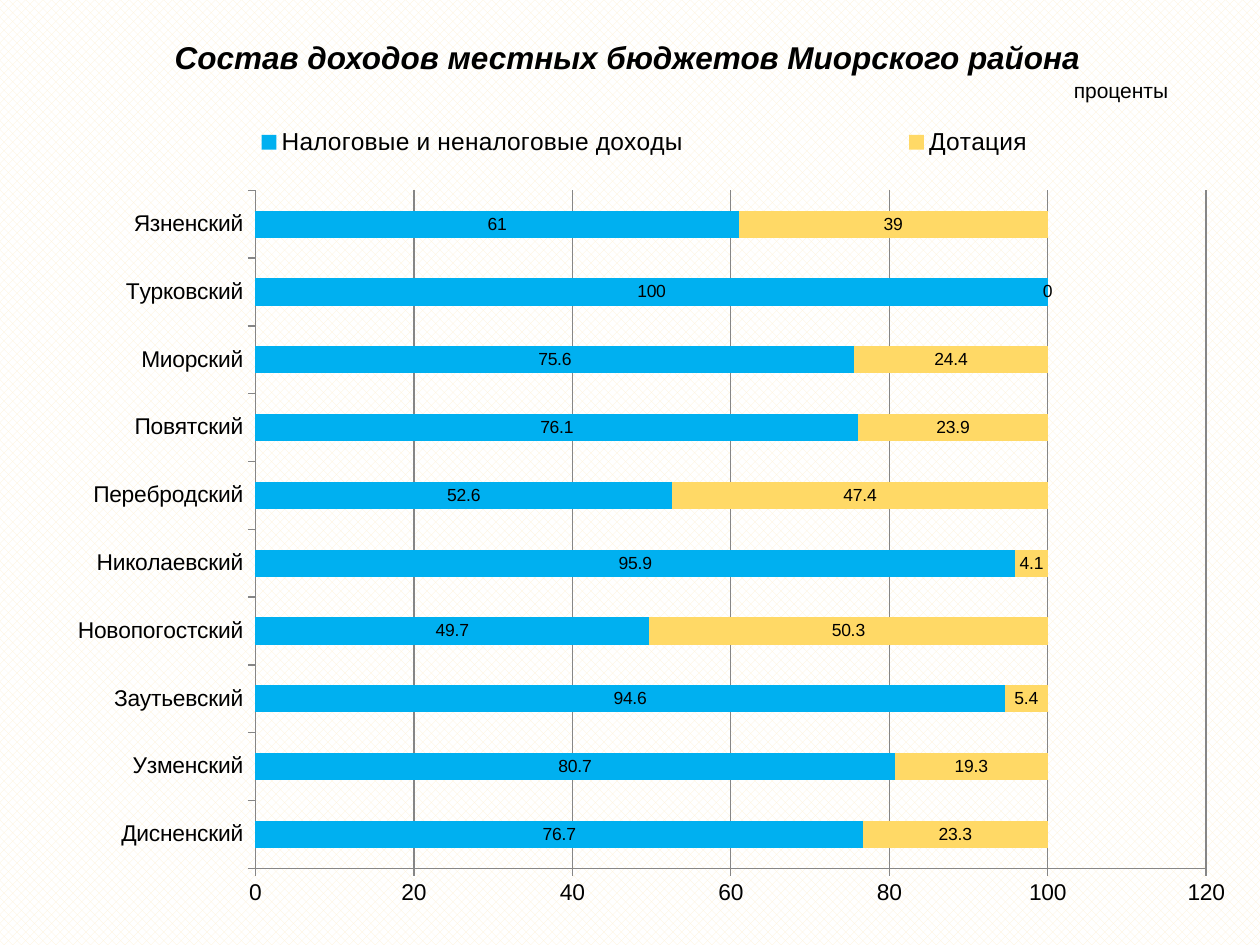
from lxml import etree
from pptx import Presentation
from pptx.chart.data import CategoryChartData
from pptx.dml.color import RGBColor
from pptx.enum.chart import XL_CHART_TYPE, XL_LABEL_POSITION, XL_LEGEND_POSITION, XL_TICK_MARK
from pptx.enum.dml import MSO_PATTERN
from pptx.enum.shapes import MSO_SHAPE
from pptx.enum.text import MSO_ANCHOR, PP_ALIGN
from pptx.oxml.ns import qn
from pptx.util import Cm, Pt

BAR_STACKED = XL_CHART_TYPE.BAR_STACKED
LABEL_CENTER = XL_LABEL_POSITION.CENTER
LEGEND_TOP = XL_LEGEND_POSITION.TOP
TICK_OUTSIDE = XL_TICK_MARK.OUTSIDE
DOTS = MSO_PATTERN.PERCENT_50
ROUNDED = MSO_SHAPE.ROUNDED_RECTANGLE
MIDDLE = MSO_ANCHOR.MIDDLE
CENTER = PP_ALIGN.CENTER

BLACK = RGBColor(0x00, 0x00, 0x00)
WHITE = RGBColor(0xFF, 0xFF, 0xFF)
CREAM = RGBColor(0xFE, 0xF1, 0xD6)
GRAY = RGBColor(0x86, 0x86, 0x86)
BLUE = RGBColor(0x00, 0xB0, 0xF0)
YELLOW = RGBColor(0xFF, 0xD9, 0x66)

BUDGETS = [
    ("Дисненский", 76.7, 23.3),
    ("Узменский", 80.7, 19.3),
    ("Заутьевский", 94.6, 5.4),
    ("Новопогостский", 49.7, 50.3),
    ("Николаевский", 95.9, 4.1),
    ("Перебродский", 52.6, 47.4),
    ("Повятский", 76.1, 23.9),
    ("Миорский", 75.6, 24.4),
    ("Турковский", 100, 0),
    ("Язненский", 61, 39),
]


def set_font(font, size):
    font.name = "Arial"
    font.size = Pt(size)
    font.color.rgb = BLACK


def set_layout(parent, after, x, y, w, h, inner=False):
    """Place a chart part by fractions of the chart area."""
    for old in parent.findall(qn("c:layout")):
        parent.remove(old)
    layout = etree.Element(qn("c:layout"))
    manual = etree.SubElement(layout, qn("c:manualLayout"))
    settings = [("layoutTarget", "inner")] if inner else []
    settings += [("xMode", "edge"), ("yMode", "edge"),
                 ("x", x), ("y", y), ("w", w), ("h", h)]
    for tag, value in settings:
        etree.SubElement(manual, qn(f"c:{tag}")).set("val", str(value))
    if after is None:
        parent.insert(0, layout)
    else:
        after.addnext(layout)


prs = Presentation()
prs.slide_width, prs.slide_height = Cm(25.4), Cm(19.05)
s = prs.slides.add_slide(prs.slide_layouts[5])
fill = s.background.fill
fill.patterned()
fill.pattern = DOTS
fill.fore_color.rgb = CREAM
fill.back_color.rgb = WHITE

# Title and unit
title = s.shapes.title
title.left, title.top, title.width, title.height = Cm(1.7), Cm(0.74), Cm(21.9), Cm(0.91)
unit = s.shapes.add_shape(ROUNDED, Cm(20.9), Cm(1.52), Cm(3.4), Cm(0.61))
unit.shadow.inherit = False
unit.fill.background()
unit.line.fill.background()
for sp, text, size in (
    (title, "Состав доходов местных бюджетов Миорского района", 18),
    (unit, "проценты", 12),
):
    tf = sp.text_frame
    tf.text = text
    tf.word_wrap = True
    tf.vertical_anchor = MIDDLE
    p = tf.paragraphs[0]
    p.alignment = CENTER
    set_font(p.font, size)
p = title.text_frame.paragraphs[0]
p.line_spacing = 0.9
p.font.bold = p.font.italic = True

# Stacked bars
data = CategoryChartData()
data.categories = [name for name, _, _ in BUDGETS]
data.add_series("Налоговые и неналоговые доходы", [own for _, own, _ in BUDGETS])
data.add_series("Дотация", [grant for _, _, grant in BUDGETS])
chart = s.shapes.add_chart(
    BAR_STACKED, Cm(0.89), Cm(2.13), Cm(24.2), Cm(16.41), data).chart
chart.has_title = False
chart.font.name = "Calibri"
chart.font.size = Pt(18)
chart.font.color.rgb = BLACK

plot = chart.plots[0]
plot.gap_width = 150
plot.overlap = 100
plot.vary_by_categories = False
for series, color in zip(plot.series, (BLUE, YELLOW)):
    series.format.fill.solid()
    series.format.fill.fore_color.rgb = color
    labels = series.data_labels
    labels.show_value = True
    labels.position = LABEL_CENTER
    set_font(labels.font, 10)

for axis in (chart.category_axis, chart.value_axis):
    axis.major_tick_mark = TICK_OUTSIDE
    axis.format.line.color.rgb = GRAY
    set_font(axis.tick_labels.font, 13)
value_axis = chart.value_axis
value_axis.minimum_scale, value_axis.maximum_scale = 0, 120
value_axis.major_unit = 20
value_axis.has_major_gridlines = True
value_axis.major_gridlines.format.line.color.rgb = GRAY

chart.has_legend = True
legend = chart.legend
legend.position = LEGEND_TOP
legend.include_in_layout = False
set_font(legend.font, 14)

legend_xml = chart.element.find(f".//{qn('c:legend')}")
set_layout(legend_xml, legend_xml.find(qn("c:legendPos")), 0, 0.01, 1, 0.07)
set_layout(chart.element.find(f".//{qn('c:plotArea')}"), None,
           0.176, 0.104, 0.792, 0.833, inner=True)

prs.save("out.pptx")
